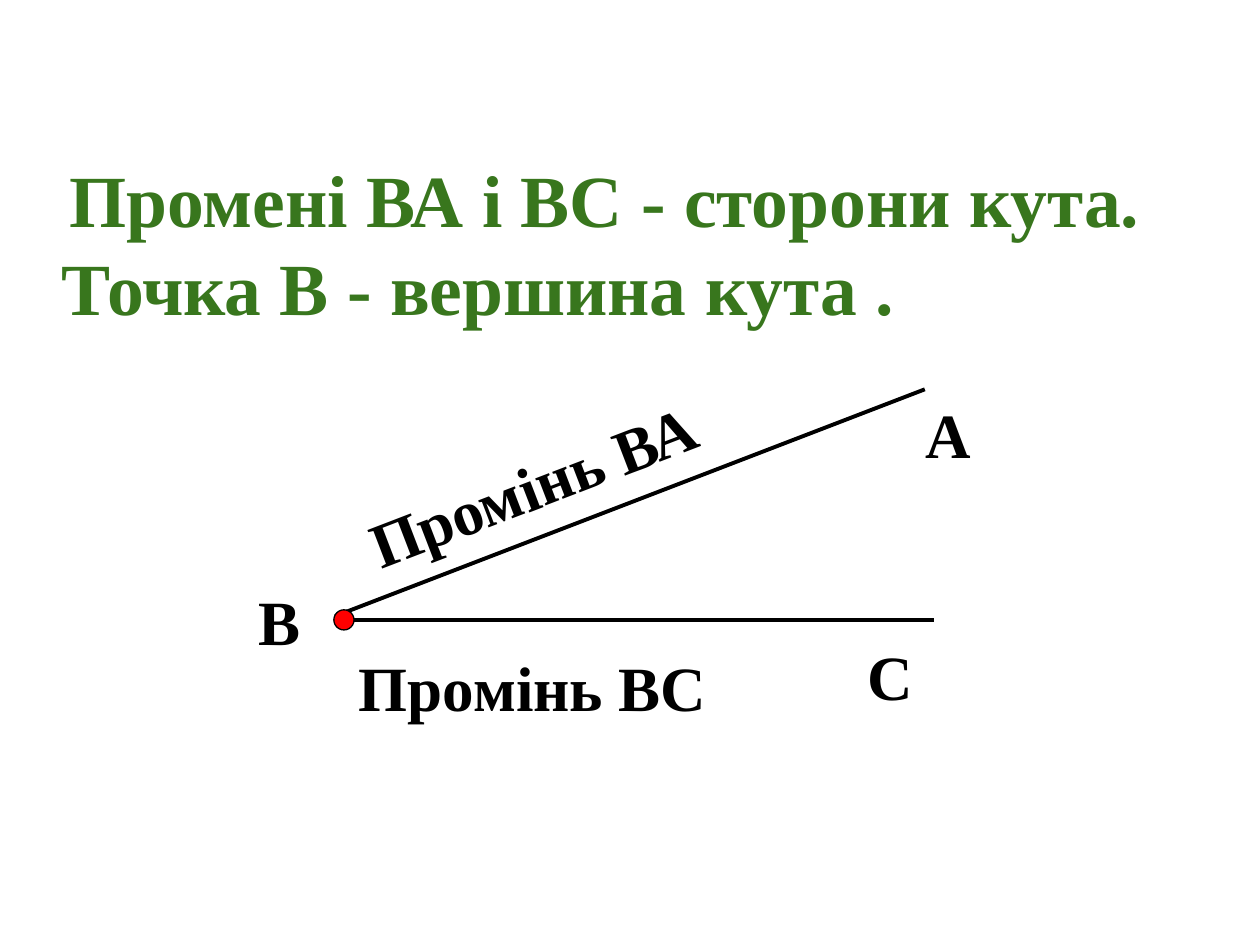
from dataclasses import dataclass

import pptx
import pptx.dml.color
import pptx.enum.shapes
import pptx.enum.text
import pptx.oxml.ns
import pptx.util
from lxml import etree
from pptx.dml.color import RGBColor
from pptx.util import Inches

BLACK = RGBColor(0x00, 0x00, 0x00)
GREEN = RGBColor(0x38, 0x76, 0x1D)
RED = RGBColor(0xFF, 0x00, 0x00)
FONT = "Times New Roman"


@dataclass
class Ray:
    start: tuple[float, float]
    end: tuple[float, float]


@dataclass
class Label:
    text: str
    left: float
    top: float
    width: float = 0.7
    height: float = 0.71
    rotation: float = 0
    size: float = 36
    color: RGBColor = BLACK
    align: pptx.enum.text.PP_ALIGN = pptx.enum.text.PP_ALIGN.LEFT


RAYS = [
    Ray((2.66, 4.89), (7.34, 3.09)),
    Ray((2.65, 4.92), (7.41, 4.92)),
]
LABELS = [
    Label("В", 1.95, 4.57),
    Label("Промінь ВС", 2.75, 5.1, width=3.45),
    Label("А", 7.25, 3.09),
    Label("С", 6.79, 5.01),
    Label("Промінь ВА", 2.75, 3.4, width=3.45, rotation=339),
]
DEFINITION = Label(
    "Промені ВА і ВС - сторони кута.\nТочка В - вершина кута .",
    0.39, 1.17, width=9.28, height=1.52, size=42, color=GREEN,
    align=pptx.enum.text.PP_ALIGN.JUSTIFY,
)


def draw_ray(slide: pptx.slide.Slide, ray: Ray) -> None:
    line = slide.shapes.add_connector(
        pptx.enum.shapes.MSO_CONNECTOR.STRAIGHT,
        *map(Inches, ray.start + ray.end),
    )
    line.line.color.rgb = BLACK
    line.line.width = pptx.util.Pt(2.25)
    etree.SubElement(line._element.spPr, pptx.oxml.ns.qn("a:effectLst"))


def draw_label(slide: pptx.slide.Slide, label: Label) -> pptx.text.text.TextFrame:
    box = slide.shapes.add_textbox(
        Inches(label.left), Inches(label.top), Inches(label.width), Inches(label.height)
    )
    box.rotation = label.rotation
    frame = box.text_frame
    frame.word_wrap = True
    frame.auto_size = pptx.enum.text.MSO_AUTO_SIZE.SHAPE_TO_FIT_TEXT
    frame.text = label.text
    for paragraph in frame.paragraphs:
        paragraph.alignment = label.align
        paragraph.font.name = FONT
        paragraph.font.size = pptx.util.Pt(label.size)
        paragraph.font.bold = True
        paragraph.font.color.rgb = label.color
    return frame


def draw_vertex(slide: pptx.slide.Slide, left: float, top: float, size: float) -> None:
    vertex = slide.shapes.add_shape(
        pptx.enum.shapes.MSO_SHAPE.OVAL,
        Inches(left), Inches(top), Inches(size), Inches(size),
    )
    vertex.shadow.inherit = False
    vertex.fill.solid()
    vertex.fill.fore_color.rgb = RED
    vertex.line.color.rgb = BLACK
    vertex.line.width = pptx.util.Pt(0.75)


def main() -> None:
    presentation = pptx.Presentation()
    presentation.slide_width = Inches(10)
    presentation.slide_height = Inches(7.5)
    slide = presentation.slides.add_slide(presentation.slide_layouts[6])

    for ray in RAYS:
        draw_ray(slide, ray)
    for label in LABELS:
        draw_label(slide, label)
    definition = draw_label(slide, DEFINITION)
    first_line = definition.paragraphs[0]._p.get_or_add_pPr()
    first_line.set("indent", str(Inches(0.06)))
    draw_vertex(slide, 2.65, 4.84, 0.16)

    presentation.save("out.pptx")


if __name__ == "__main__":
    main()
